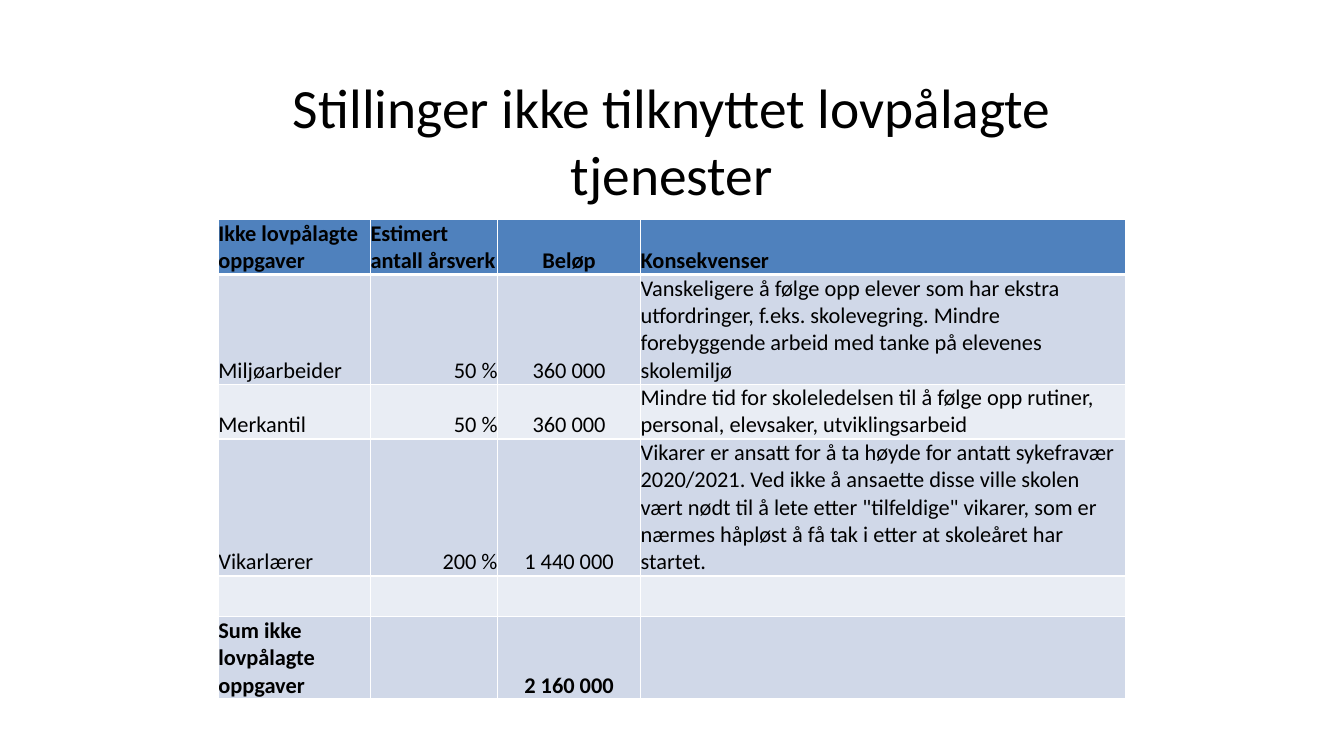
"""Build the slide about positions not tied to statutory services."""
import pptx
import pptx.dml.color
import pptx.enum.text
import pptx.oxml
import pptx.oxml.ns
import pptx.util

Pt = pptx.util.Pt
RGBColor = pptx.dml.color.RGBColor
ALIGN = pptx.enum.text.PP_ALIGN
ANCHOR = pptx.enum.text.MSO_ANCHOR

TITLE = "Stillinger ikke tilknyttet lovpålagte tjenester"
ROWS = [
    ("Ikke lovpålagte oppgaver", "Estimert antall årsverk", "Beløp", "Konsekvenser"),
    ("Miljøarbeider", "50 %", "360 000",
     "Vanskeligere å følge opp elever som har ekstra utfordringer, f.eks. skolevegring. "
     "Mindre forebyggende arbeid med tanke på elevenes skolemiljø"),
    ("Merkantil", "50 %", "360 000",
     "Mindre tid for skoleledelsen til å følge opp rutiner, personal, elevsaker, "
     "utviklingsarbeid"),
    ("Vikarlærer", "200 %", "1 440 000",
     "Vikarer er ansatt for å ta høyde for antatt sykefravær 2020/2021. Ved ikke å "
     "ansaette disse ville skolen vært nødt til å lete etter \"tilfeldige\" vikarer, "
     "som er nærmes håpløst å få tak i etter at skoleåret har startet."),
    ("", "", "", ""),
    ("Sum ikke lovpålagte oppgaver", "", "2 160 000", ""),
]
LINE_COUNTS = (2, 4, 2, 5, 1.5, 3)
COLUMN_WIDTHS = (108.7, 90.7, 102.3, 346.3)
ALIGNMENTS = (ALIGN.LEFT, ALIGN.RIGHT, ALIGN.CENTER, ALIGN.LEFT)

FONT = "Calibri"
BLACK = RGBColor(0x00, 0x00, 0x00)
WHITE = RGBColor(0xFF, 0xFF, 0xFF)
HEADER_FILL = RGBColor(0x4F, 0x81, 0xBD)
BAND_FILLS = (RGBColor(0xE9, 0xED, 0xF4), RGBColor(0xD0, 0xD8, 0xE8))

LEFT, WIDTH = 156, 648
TITLE_TOP, TITLE_HEIGHT = 54.7, 90
TABLE_TOP, LINE_HEIGHT = 157, 19.5


def format_runs(paragraph, size, bold, alignment):
    """Apply the slide's font and the alignment to one paragraph."""
    paragraph.alignment = alignment
    for run in paragraph.runs:
        run.font.name = FONT
        run.font.size = Pt(size)
        run.font.bold = bold
        run.font.color.rgb = BLACK


def add_borders(cell, top, bottom):
    """Draw white cell borders with the given top and bottom widths."""
    properties = cell._tc.get_or_add_tcPr()
    for side, width in (("L", 1), ("R", 1), ("T", top), ("B", bottom)):
        properties.append(pptx.oxml.parse_xml(
            f'<a:ln{side} {pptx.oxml.ns.nsdecls("a")} w="{Pt(width)}">'
            f'<a:solidFill><a:srgbClr val="{WHITE}"/></a:solidFill></a:ln{side}>'))


def add_title(slide):
    """Place and format the title."""
    title = slide.shapes.title
    title.left, title.top = Pt(LEFT), Pt(TITLE_TOP)
    title.width, title.height = Pt(WIDTH), Pt(TITLE_HEIGHT)
    frame = title.text_frame
    frame.text = TITLE
    frame.word_wrap = True
    frame.auto_size = pptx.enum.text.MSO_AUTO_SIZE.NONE
    frame.vertical_anchor = ANCHOR.MIDDLE
    format_runs(frame.paragraphs[0], 39.6, False, ALIGN.CENTER)


def add_positions_table(slide):
    """Fill the table of positions, amounts and consequences."""
    table = slide.shapes.add_table(
        len(ROWS), len(COLUMN_WIDTHS), Pt(LEFT), Pt(TABLE_TOP),
        Pt(WIDTH), Pt(LINE_HEIGHT * sum(LINE_COUNTS))).table
    for column, width in zip(table.columns, COLUMN_WIDTHS):
        column.width = Pt(width)
    for row_index, texts in enumerate(ROWS):
        table.rows[row_index].height = Pt(LINE_HEIGHT * LINE_COUNTS[row_index])
        is_header = row_index == 0
        bold = row_index in (0, len(ROWS) - 1)
        for column_index, text in enumerate(texts):
            cell = table.cell(row_index, column_index)
            add_borders(cell, 3 if row_index == 1 else 1, 3 if is_header else 1)
            cell.fill.solid()
            cell.fill.fore_color.rgb = HEADER_FILL if is_header else BAND_FILLS[row_index % 2]
            cell.margin_left = cell.margin_right = cell.margin_top = cell.margin_bottom = 0
            cell.vertical_anchor = ANCHOR.BOTTOM
            cell.text_frame.text = text
            alignment = ALIGNMENTS[column_index]
            if is_header and alignment == ALIGN.RIGHT:
                alignment = ALIGN.LEFT
            format_runs(cell.text_frame.paragraphs[0], 16, bold, alignment)


def main():
    """Create and save the presentation."""
    presentation = pptx.Presentation()
    presentation.slide_width, presentation.slide_height = Pt(960), Pt(540)
    slide = presentation.slides.add_slide(presentation.slide_layouts[5])
    add_title(slide)
    add_positions_table(slide)
    presentation.save("out.pptx")


if __name__ == "__main__":
    main()
